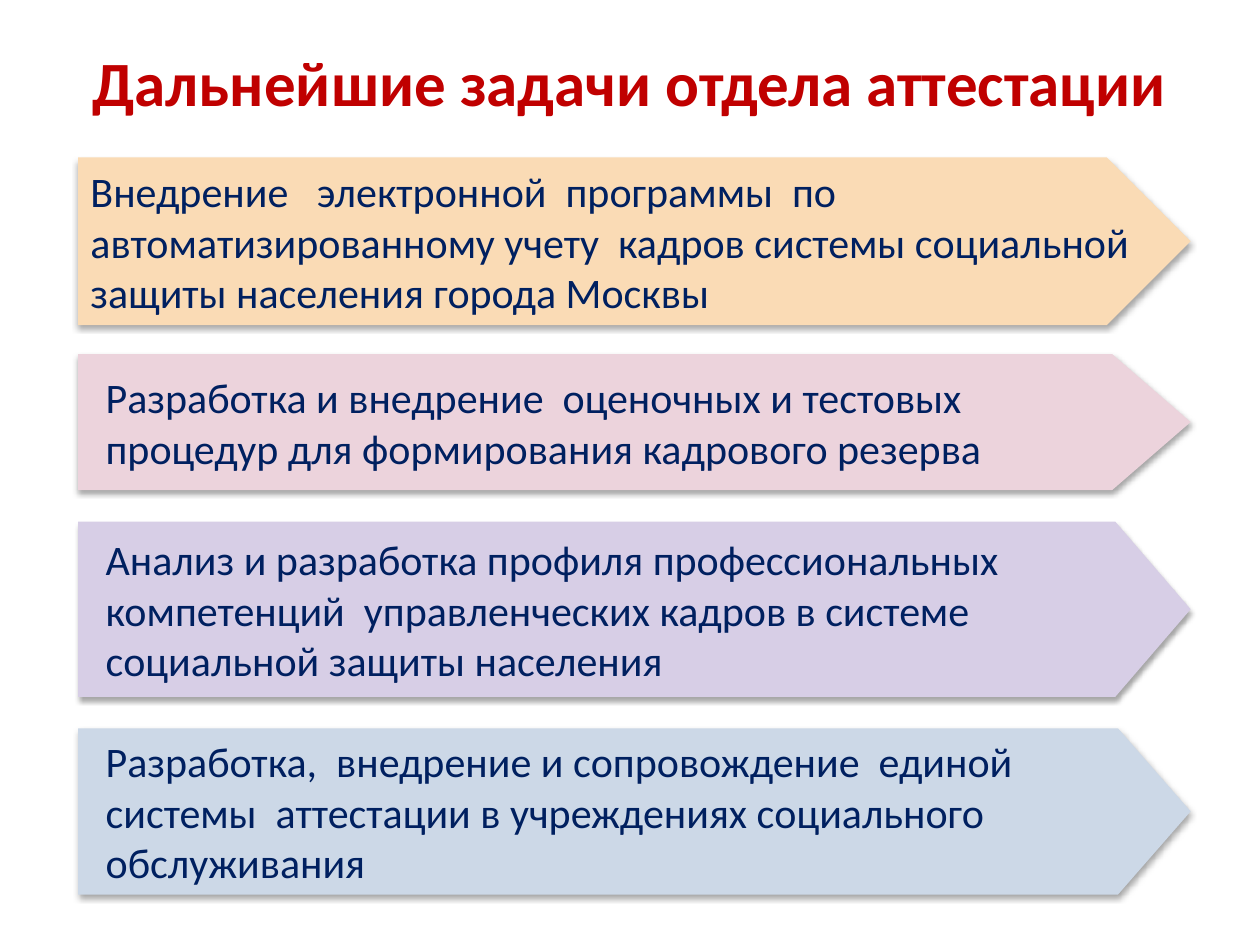
from lxml import etree
from pptx import Presentation
from pptx.dml.color import RGBColor
from pptx.enum.shapes import MSO_SHAPE as SHAPE
from pptx.enum.text import MSO_ANCHOR as ANCHOR, MSO_AUTO_SIZE as AUTO, PP_ALIGN as ALIGN
from pptx.oxml.ns import qn
from pptx.util import Inches, Pt

RED = RGBColor(0xC0, 0x00, 0x00)
NAVY = RGBColor(0x00, 0x20, 0x60)
PEACH = RGBColor(0xFA, 0xDB, 0xB5)
PINK = RGBColor(0xEC, 0xD3, 0xDC)
LILAC = RGBColor(0xD7, 0xCE, 0xE6)
BLUE = RGBColor(0xCC, 0xD8, 0xE7)

ARROW_LEFT, ARROW_WIDTH = 0.62, 8.83

# top, height, point depth, fill, hanging indent, paragraphs
TASKS = [
    (1.25, 1.33, 0.5, PEACH, False,
     ["Внедрение   электронной  программы  по  автоматизированному учету  "
      "кадров системы социальной защиты населения города Москвы"]),
    (2.81, 1.08, 0.577, PINK, True,
     ["Разработка и внедрение  оценочных и тестовых",
      "процедур для формирования кадрового резерва"]),
    (4.14, 1.39, 0.43, LILAC, True,
     ["Анализ и разработка профиля профессиональных",
      "компетенций  управленческих кадров в системе",
      "социальной защиты населения"]),
    (5.78, 1.32, 0.437, BLUE, True,
     ["Разработка,  внедрение и сопровождение  единой",
      "системы  аттестации в учреждениях социального",
      "обслуживания"]),
]


def write_text(sp, lines, size=24, color=NAVY, bold=False, align=ALIGN.LEFT,
               hanging=False):
    tf = sp.text_frame
    tf.word_wrap = True
    tf.auto_size = AUTO.NONE
    tf.vertical_anchor = ANCHOR.MIDDLE
    for i, line in enumerate(lines):
        p = tf.add_paragraph() if i else tf.paragraphs[0]
        p.alignment = align
        if hanging:
            pPr = p._p.get_or_add_pPr()
            pPr.set("marL", str(Inches(0.74)))
            pPr.set("indent", str(Inches(-0.62)))
        r = p.add_run()
        r.text = line
        font = r.font
        font.name, font.size, font.bold = "Calibri", Pt(size), bold
        font.color.rgb = color


def add_shadow(sp):
    """Soft black shadow falling straight down."""
    sp.shadow.inherit = False
    effects = sp._element.spPr.find(qn("a:effectLst"))
    shadow = etree.SubElement(effects, qn("a:outerShdw"), blurRad=str(Pt(3.1)),
                              dist=str(Pt(1.8)), dir="5400000", rotWithShape="0")
    color = etree.SubElement(shadow, qn("a:srgbClr"), val="000000")
    etree.SubElement(color, qn("a:alpha"), val="35000")


def add_title(s, text):
    sp = s.shapes.title
    sp.left, sp.top = Inches(0.55), Inches(0.16)
    sp.width, sp.height = Inches(9), Inches(0.97)
    write_text(sp, [text], size=36, color=RED, bold=True, align=ALIGN.CENTER)


def add_task(s, top, height, depth, fill, hanging, lines):
    sp = s.shapes.add_shape(SHAPE.PENTAGON, Inches(ARROW_LEFT), Inches(top),
                            Inches(ARROW_WIDTH), Inches(height))
    sp.adjustments[0] = depth
    sp.fill.solid()
    sp.fill.fore_color.rgb = fill
    sp.line.fill.background()
    add_shadow(sp)
    write_text(sp, lines, hanging=hanging)


def main():
    prs = Presentation()
    prs.slide_width, prs.slide_height = Inches(10), Inches(7.5)
    s = prs.slides.add_slide(prs.slide_layouts[5])
    # The closing space is part of the centred heading
    add_title(s, "Дальнейшие задачи отдела аттестации ")
    # Arrow for each task
    for task in TASKS:
        add_task(s, *task)
    prs.save("out.pptx")


if __name__ == "__main__":
    main()
